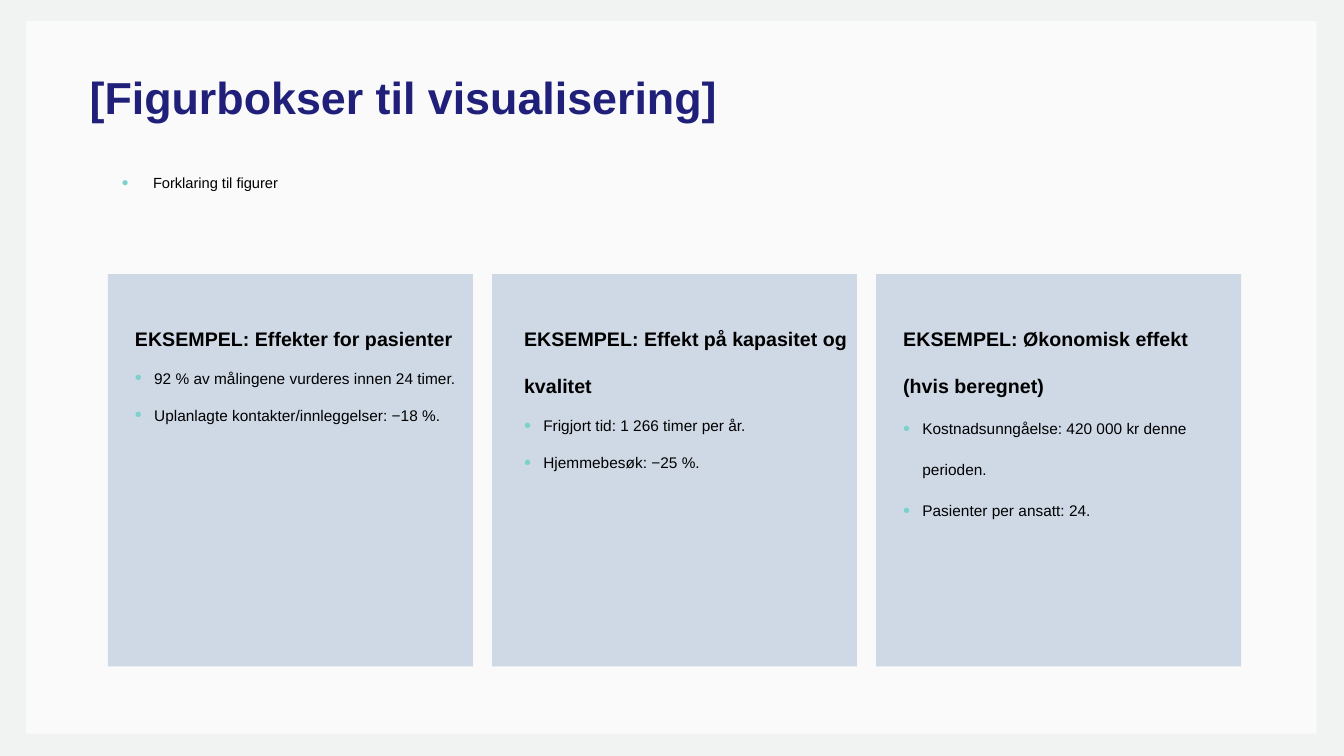
from lxml import etree
from pptx import Presentation
from pptx import util as u
from pptx.dml.color import RGBColor
from pptx.enum import shapes, text
from pptx.oxml.ns import qn

FONT = "Arial"
BLACK = "000000"
BOX_LEFT, BOX_TOP, BOX_WIDTH, BOX_HEIGHT, BOX_GAP = 1.07, 2.72, 3.62, 3.89, 0.19

# Text left, text width, heading, bullet line spacing, bullets
EFFECTS = [
    (1.24, 3.41, "EKSEMPEL: Effekter for pasienter", 2.0,
     ["92 % av målingene vurderes innen 24 timer.",
      "Uplanlagte kontakter/innleggelser: −18 %."]),
    (5.1, 3.53, "EKSEMPEL: Effekt på kapasitet og kvalitet", 2.0,
     ["Frigjort tid: 1 266 timer per år.", "Hjemmebesøk: −25 %."]),
    (8.86, 3.39, "EKSEMPEL: Økonomisk effekt (hvis beregnet)", 2.2,
     ["Kostnadsunngåelse: 420 000 kr denne perioden.",
      "Pasienter per ansatt: 24."]),
]


def color(value):
    return RGBColor.from_string(value)


def add_rectangle(slide, left, top, width, height, fill, opacity=100):
    shape = slide.shapes.add_shape(
        shapes.MSO_SHAPE.RECTANGLE, u.Inches(left), u.Inches(top),
        u.Inches(width), u.Inches(height))
    shape.shadow.inherit = False
    shape.fill.solid()
    shape.fill.fore_color.rgb = color(fill)
    shape.line.fill.background()
    if opacity < 100:
        fill_color = shape.fill._xPr.find(qn("a:solidFill"))[0]
        etree.SubElement(fill_color, qn("a:alpha"), val=str(opacity * 1000))


def add_text_frame(slide, left, top, width, height):
    box = slide.shapes.add_textbox(
        u.Inches(left), u.Inches(top), u.Inches(width), u.Inches(height))
    box.text_frame.word_wrap = True
    return box.text_frame


def write(paragraph, words, size, spacing, bold=False, font_color=BLACK):
    paragraph.text = words
    paragraph.line_spacing = spacing
    font = paragraph.runs[0].font
    font.name = FONT
    font.size = u.Pt(size)
    font.bold = bold
    font.color.rgb = color(font_color)


def add_bullet(paragraph, indent):
    """Give the paragraph a turquoise bullet with a hanging indent."""
    properties = paragraph._p.get_or_add_pPr()
    properties.set("marL", str(u.Inches(indent)))
    properties.set("indent", str(-u.Inches(indent)))
    bullet_color = etree.SubElement(properties, qn("a:buClr"))
    etree.SubElement(bullet_color, qn("a:srgbClr"), val="7BD2CD")
    etree.SubElement(properties, qn("a:buSzPct"), val="130000")
    etree.SubElement(properties, qn("a:buFont"), typeface=FONT)
    etree.SubElement(properties, qn("a:buChar"), char="•")


def add_effect_text(slide, left, width, heading, spacing, bullets):
    frame = add_text_frame(slide, left, 2.96, width, 3.4)
    write(frame.paragraphs[0], heading, 14, 2.0, bold=True)
    for bullet in bullets:
        paragraph = frame.add_paragraph()
        add_bullet(paragraph, 0.19)
        write(paragraph, bullet, 11, spacing)


def main():
    presentation = Presentation()
    presentation.slide_width = u.Inches(13.33)
    presentation.slide_height = u.Inches(7.5)
    slide = presentation.slides.add_slide(presentation.slide_layouts[6])

    add_rectangle(slide, 0, 0, 13.33, 7.5, "F1F2F2")
    add_rectangle(slide, 0.26, 0.21, 12.8, 7.07, "FFFFFF", opacity=68)

    title = add_text_frame(slide, 0.79, 0.67, 7.98, 0.65)
    title.vertical_anchor = text.MSO_ANCHOR.MIDDLE
    write(title.paragraphs[0], "[Figurbokser til visualisering]", 32, 0.9,
          bold=True, font_color="20207A")

    explanation = add_text_frame(slide, 1.11, 1.59, 11.17, 0.84).paragraphs[0]
    add_bullet(explanation, 0.31)
    write(explanation, "Forklaring til figurer", 10.5, 1.5)

    for index, effect in enumerate(EFFECTS):
        box_left = BOX_LEFT + index * (BOX_WIDTH + BOX_GAP)
        add_rectangle(slide, box_left, BOX_TOP, BOX_WIDTH, BOX_HEIGHT, "CFD9E6")
        add_effect_text(slide, *effect)

    presentation.save("out.pptx")


if __name__ == "__main__":
    main()
